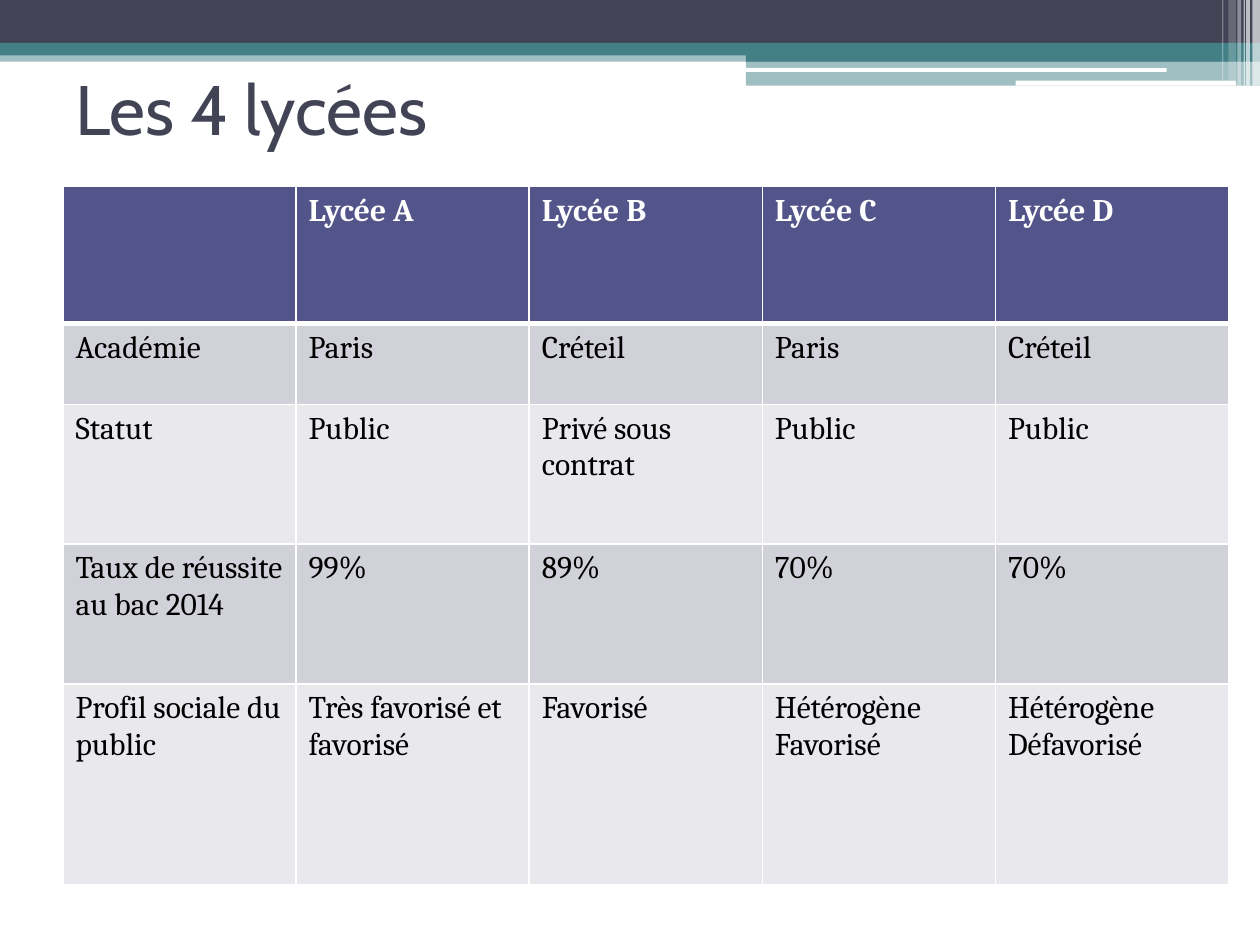
from lxml.etree import SubElement
from pptx import Presentation
from pptx.dml.color import RGBColor
from pptx.enum.shapes import MSO_SHAPE as Shape
from pptx.enum.text import MSO_ANCHOR as Anchor
from pptx.oxml.ns import qn
from pptx.util import Inches, Pt

COLORS = {
    "slate": "424456", "teal": "438086", "white": "FFFFFF", "black": "000000",
    "header": "53548A", "band_dark": "D1D1DA", "band_light": "E9E9ED",
}


def write(frame, text, font="Cambria", size=18, color="black", bold=False):
    run = frame.paragraphs[0].add_run()
    run.text = text
    run.font.name = font
    run.font.size = Pt(size)
    run.font.bold = bold
    run.font.color.rgb = RGBColor.from_string(COLORS[color])


def set_borders(cell, **widths):
    properties = cell._tc.get_or_add_tcPr()
    for position, side in enumerate(("L", "R", "T", "B")):
        line = properties.makeelement(qn(f"a:ln{side}"), {"w": str(Pt(widths.get(side, 1)))})
        fill = SubElement(line, qn("a:solidFill"))
        SubElement(fill, qn("a:srgbClr"), val=COLORS["white"])
        properties.insert(position, line)


deck = Presentation()
deck.slide_width, deck.slide_height = Inches(10), Inches(7.5)
slide = deck.slides.add_slide(deck.slide_layouts[6])

# Top banner: left, top, width, height, colour, opacity in percent, preset
RECT, ROUND = Shape.RECTANGLE, Shape.ROUNDED_RECTANGLE
banner = [
    (0, 0.4, 10, 0.09, "teal", 50, RECT),
    (0, 0, 10, 0.34, "slate", 100, RECT),
    (0, 0.34, 10, 0.1, "teal", 100, RECT),
    (5.92, 0.39, 4.08, 0.1, "teal", 100, RECT),
    (5.92, 0.48, 4.08, 0.2, "teal", 50, RECT),
    (5.91, 0.54, 3.35, 0.03, "white", 100, ROUND),
    (8.06, 0.64, 1.75, 0.04, "white", 100, ROUND),
]
# Vertical stripes at the right end: left, width, height, opacity
stripes = [
    (9.94, 0.06, 0.68, 65), (9.89, 0.03, 0.68, 65), (9.87, 0.01, 0.68, 60),
    (9.82, 0.03, 0.68, 40), (9.75, 0.06, 0.64, 20), (9.7, 0.01, 0.64, 30),
]
banner += [(left, 0, width, height, "white", opacity, RECT)
           for left, width, height, opacity in stripes]

for left, top, width, height, color, opacity, preset in banner:
    bar = slide.shapes.add_shape(preset, Inches(left), Inches(top), Inches(width), Inches(height))
    bar.shadow.inherit = False
    bar.line.fill.background()
    bar.fill.solid()
    bar.fill.fore_color.rgb = RGBColor.from_string(COLORS[color])
    if opacity < 100:
        tint = bar._element.spPr.find(f"{qn('a:solidFill')}/{qn('a:srgbClr')}")
        SubElement(tint, qn("a:alpha"), val=str(opacity * 1000))

# Title
title = slide.shapes.add_textbox(Inches(0.5), Inches(0.23), Inches(9), Inches(1.25)).text_frame
title.word_wrap = True
title.vertical_anchor = Anchor.MIDDLE
write(title, "Les 4 lycées", font="Cabin", size=40, color="slate")

# Comparison of the schools
schools = [
    ["", "Lycée A", "Lycée B", "Lycée C", "Lycée D"],
    ["Académie", "Paris", "Créteil", "Paris", "Créteil"],
    ["Statut", "Public", "Privé sous contrat", "Public", "Public"],
    ["Taux de réussite au bac 2014", "99%", "89%", "70%", "70%"],
    ["Profil sociale du public", "Très favorisé et favorisé", "Favorisé",
     "Hétérogène Favorisé", "Hétérogène Défavorisé"],
]
row_heights = [1.09, 0.64, 1.11, 1.11, 1.59]
table = slide.shapes.add_table(len(schools), len(schools[0]), Inches(0.5), Inches(1.48),
                               Inches(9.26), Inches(sum(row_heights))).table
for column in table.columns:
    column.width = Inches(1.85)

for r, (values, height) in enumerate(zip(schools, row_heights)):
    table.rows[r].height = Inches(height)
    is_header = r == 0
    band = "header" if is_header else ("band_light", "band_dark")[r % 2]
    for c, value in enumerate(values):
        cell = table.cell(r, c)
        cell.fill.solid()
        cell.fill.fore_color.rgb = RGBColor.from_string(COLORS[band])
        set_borders(cell, T=3 if r == 1 else 1, B=3 if is_header else 1)
        if value:
            write(cell.text_frame, value, color="white" if is_header else "black", bold=is_header)

deck.save("out.pptx")
